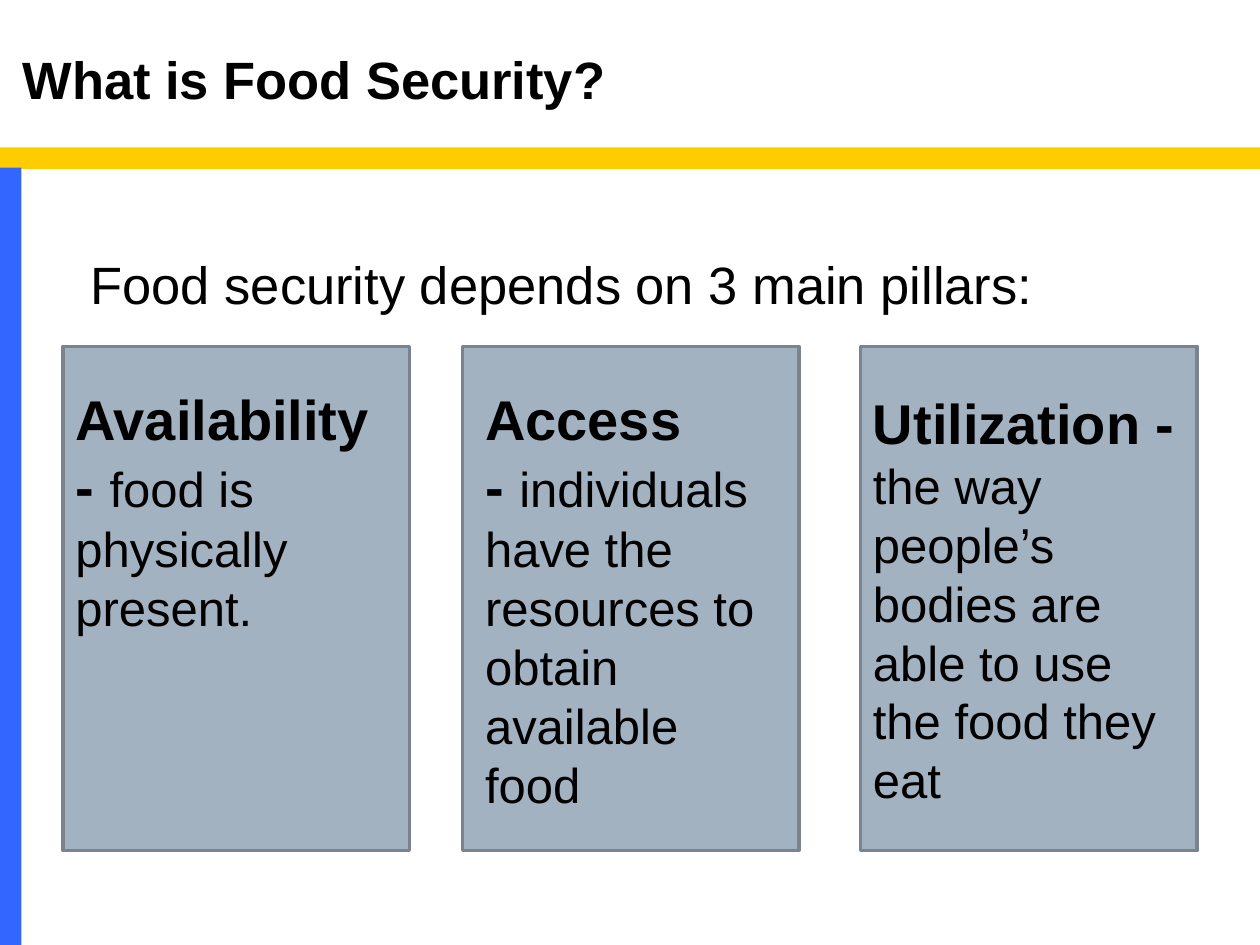
from pptx import Presentation
from pptx.dml.color import RGBColor
from pptx.enum.shapes import MSO_SHAPE
from pptx.enum.text import MSO_ANCHOR, PP_ALIGN
from pptx.util import Inches, Pt

RECT = MSO_SHAPE.RECTANGLE
TOP, MIDDLE, BOTTOM = MSO_ANCHOR.TOP, MSO_ANCHOR.MIDDLE, MSO_ANCHOR.BOTTOM
LEFT = PP_ALIGN.LEFT
FONT, BLACK = "Arial", "000000"
HEAD = {"size": Pt(32), "bold": True}
BODY = {"size": Pt(28), "bold": False}

# left, width, (left, top, right) insets, anchor, paragraphs of (text, format) runs
PILLARS = [
    (0.5, 2.75, (0.1, 0.3, 0.27), TOP,
     [[("Availability - ", HEAD), ("food is physically present.", BODY)]]),
    (3.67, 2.67, (0.18, 0.3, 0.11), TOP,
     [[("Access", HEAD)],
      [("- ", HEAD),
       ("individuals have the resources to obtain available food", BODY)]]),
    (6.83, 2.67, (0.1, 0.05, 0.1), MIDDLE,
     [[("Utilization -", HEAD)],
      [("the way people’s bodies are able to use the food they eat", BODY)]]),
]


def rgb(value):
    return RGBColor.from_string(value)


def inches(box):
    return [Inches(v) for v in box]


def add_rect(slide, box, fill, line=None):
    sp = slide.shapes.add_shape(RECT, *inches(box))
    sp.shadow.inherit = False
    sp.fill.solid()
    sp.fill.fore_color.rgb = rgb(fill)
    if line:
        sp.line.color.rgb = rgb(line)
        sp.line.width = Pt(2)
    else:
        sp.line.fill.background()
    return sp


def write(tf, paragraphs, anchor=TOP, insets=(0.1, 0.05, 0.1)):
    left, top, right = inches(insets)
    frame = {"word_wrap": True, "vertical_anchor": anchor, "margin_left": left,
             "margin_top": top, "margin_right": right}
    for name, value in frame.items():
        setattr(tf, name, value)
    for i, runs in enumerate(paragraphs):
        p = tf.add_paragraph() if i else tf.paragraphs[0]
        p.alignment = LEFT
        for text, style in runs:
            r = p.add_run()
            r.text = text
            for name, value in {"name": FONT, **style}.items():
                setattr(r.font, name, value)
            r.font.color.rgb = rgb(BLACK)


def add_frame(slide):
    """Yellow rule under the title and blue bar down the left edge."""
    add_rect(slide, (0, 1.17, 10, 0.17), "FFCC00")
    add_rect(slide, (0, 1.33, 0.17, 6.17), "3366FF")


def add_title(slide, box, text):
    title = slide.shapes.title
    title.left, title.top, title.width, title.height = inches(box)
    write(title.text_frame, [[(text, {"size": Pt(30), "bold": True})]], BOTTOM)


def add_lead(slide, box, text):
    tb = slide.shapes.add_textbox(*inches(box))
    write(tb.text_frame, [[(text, {"size": Pt(30)})]])


def add_pillars(slide, top, height):
    for left, width, insets, anchor, paragraphs in PILLARS:
        sp = add_rect(slide, (left, top, width, height), "A3B2C1", "79848F")
        write(sp.text_frame, paragraphs, anchor, insets)


def main():
    prs = Presentation()
    prs.slide_width, prs.slide_height = Inches(10), Inches(7.5)
    slide = prs.slides.add_slide(prs.slide_layouts[5])
    add_frame(slide)
    add_title(slide, (0.08, 0.25, 8.75, 0.67), "What is Food Security?")
    add_lead(slide, (0.62, 1.95, 8.75, 0.6),
             "Food security depends on 3 main pillars:")
    add_pillars(slide, 2.75, 4)
    prs.save("out.pptx")


if __name__ == "__main__":
    main()
